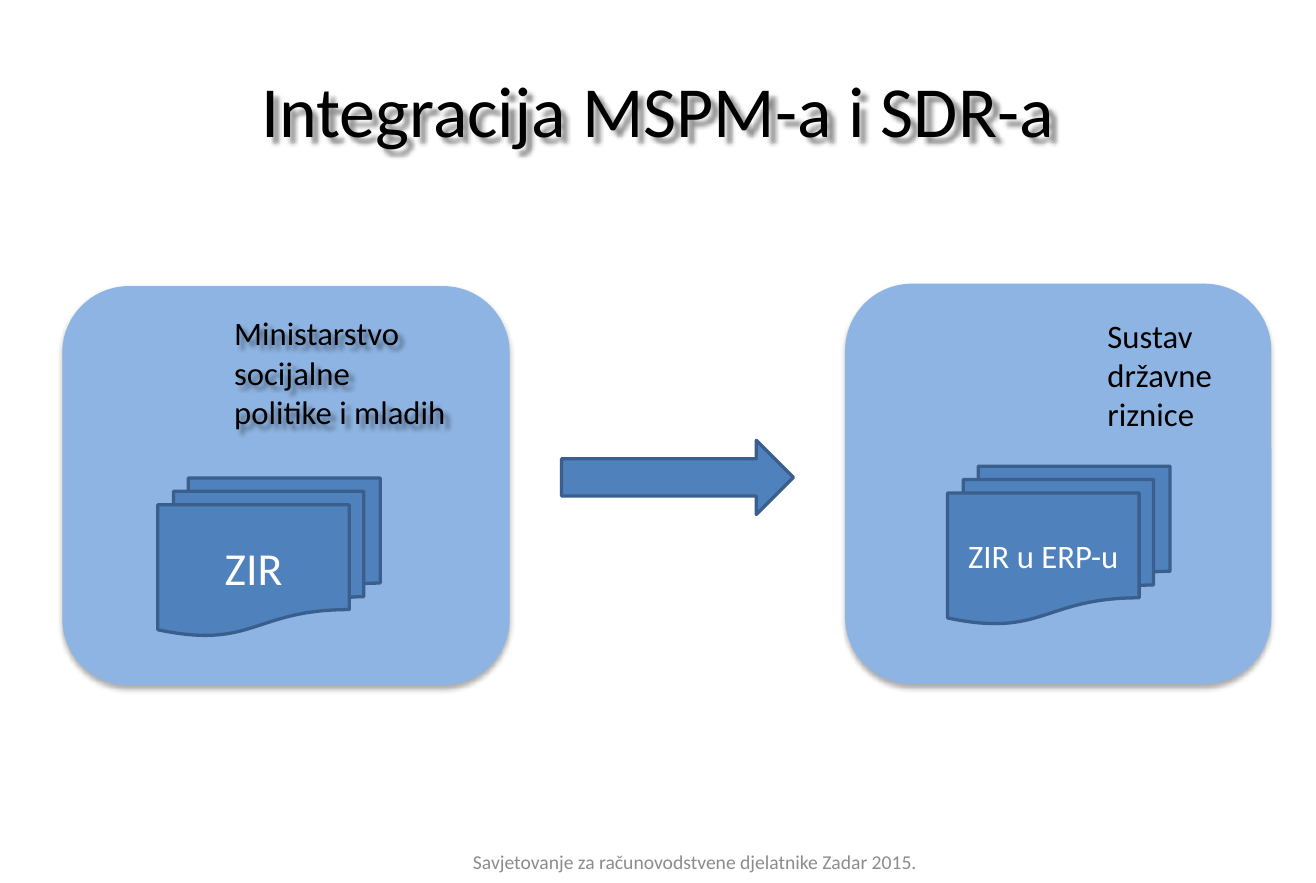
import pptx
import pptx.util
import pptx.dml.color
import pptx.enum.shapes
import pptx.enum.text
import lxml.etree

Inches = pptx.util.Inches
Kind = pptx.enum.shapes.MSO_SHAPE
Align = pptx.enum.text.PP_ALIGN
Anchor = pptx.enum.text.MSO_ANCHOR

# Content: places are left, top, width, height in inches
COLORS = {"panel": "8EB4E3", "block": "4F81BD", "edge": "3A5F8C", "black": "000000",
          "white": "FFFFFF", "footer": "8C8C8C"}
# Shadows: opacity %, blur pt, distance pt, angle in degrees
PANEL_SHADOW = (32, 3.5, 2.2, 90)
TEXT_SHADOW = (43, 3, 4, 45)

CENTER = {"align": Align.CENTER, "anchor": Anchor.MIDDLE}
LEFT = {"align": Align.LEFT, "anchor": Anchor.TOP}

PANELS = [(0.53, 2.43, 3.8, 3.39), (7.18, 2.41, 3.62, 3.4)]
ARROW = (4.77, 3.74, 1.97, 0.63)
TEXTS = [
    ("Savjetovanje za računovodstvene djelatnike Zadar 2015.", (3.4, 7.12, 5.01, 0.4),
     {"size": 12, "color": "footer", **CENTER}, None),
    ("Integracija MSPM-a i SDR-a", (0.56, 0.3, 10.06, 1.25),
     {"size": 44, "color": "black", **CENTER}, TEXT_SHADOW),
    ("Sustav državne riznice", (9.31, 2.63, 1.5, 1.11),
     {"size": 20, "color": "black", **LEFT}, None),
    ("Ministarstvo socijalne politike i mladih", (1.89, 2.61, 2.05, 1.11),
     {"size": 20, "color": "black", **LEFT}, TEXT_SHADOW),
]
DOCUMENTS = [
    ("ZIR", (1.34, 4.06, 1.89, 1.34), {"size": 28, "color": "white", **CENTER}),
    ("ZIR u ERP-u", (8.05, 3.96, 1.89, 1.34), {"size": 20, "color": "white", **CENTER}),
]


def rgb(name):
    return pptx.dml.color.RGBColor.from_string(COLORS[name])


def set_shadow(shape, shadow):
    shape.shadow.inherit = False
    if shadow is None:
        return
    opacity, blur, distance, angle = shadow
    effects = shape._element.spPr.find(pptx.oxml.ns.qn("a:effectLst"))
    outer = lxml.etree.SubElement(
        effects, pptx.oxml.ns.qn("a:outerShdw"),
        blurRad=str(int(pptx.util.Pt(blur))), dist=str(int(pptx.util.Pt(distance))),
        dir=str(angle * 60000), algn="tl", rotWithShape="0")
    color = lxml.etree.SubElement(outer, pptx.oxml.ns.qn("a:srgbClr"), val=COLORS["black"])
    lxml.etree.SubElement(color, pptx.oxml.ns.qn("a:alpha"), val=str(opacity * 1000))


def write(shape, text, style):
    frame = shape.text_frame
    frame.word_wrap = True
    frame.vertical_anchor = style["anchor"]
    para = frame.paragraphs[0]
    para.alignment = style["align"]
    span = para.add_run()
    span.text = text
    values = {"name": "Calibri", "size": pptx.util.Pt(style["size"])}
    for key, value in values.items():
        setattr(span.font, key, value)
    span.font.color.rgb = rgb(style["color"])


def add_box(page, kind, place, fill, edge=None, shadow=None):
    box = page.shapes.add_shape(kind, *map(Inches, place))
    box.fill.solid()
    box.fill.fore_color.rgb = rgb(fill)
    if edge:
        box.line.color.rgb = rgb(edge)
        box.line.width = pptx.util.Pt(2)
    else:
        box.line.fill.background()
    set_shadow(box, shadow)
    return box


def main():
    deck = pptx.Presentation()
    deck.slide_width, deck.slide_height = Inches(11.18), Inches(7.5)
    page = deck.slides.add_slide(deck.slide_layouts[6])

    # Panels and the arrow between them
    for place in PANELS:
        add_box(page, Kind.ROUNDED_RECTANGLE, place, "panel", shadow=PANEL_SHADOW)
    add_box(page, Kind.RIGHT_ARROW, ARROW, "block", "edge")

    # Footer, title and panel labels
    for text, place, style, shadow in TEXTS:
        label = page.shapes.add_textbox(*map(Inches, place))
        set_shadow(label, shadow)
        write(label, text, style)

    # Document stacks
    for text, place, style in DOCUMENTS:
        stack = add_box(page, Kind.FLOWCHART_MULTIDOCUMENT, place, "block", "edge")
        write(stack, text, style)

    deck.save("out.pptx")


if __name__ == "__main__":
    main()
